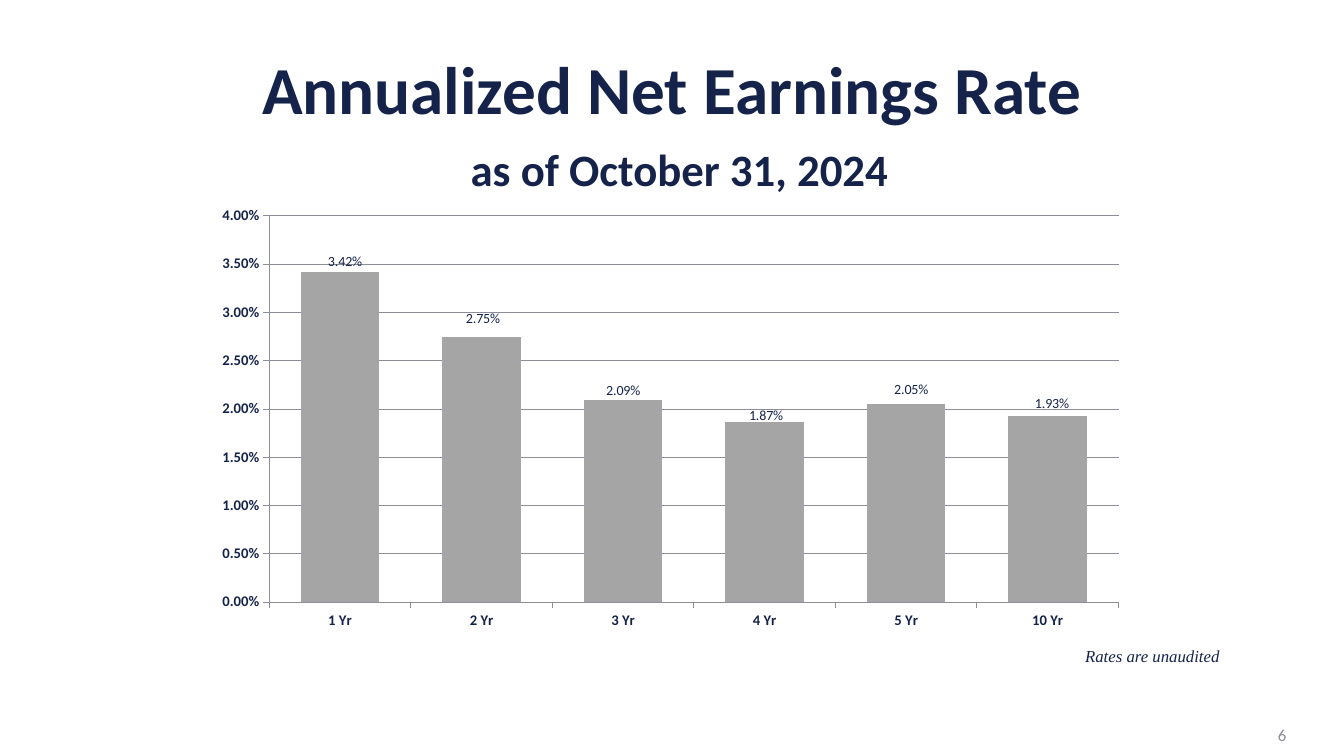
from dataclasses import dataclass

from lxml import etree
from pptx import Presentation
from pptx.chart.data import CategoryChartData
from pptx.dml.color import RGBColor
from pptx.enum import chart as ce, text as te
from pptx.oxml.ns import qn
from pptx.util import Pt


@dataclass(frozen=True)
class Theme:
    navy: RGBColor = RGBColor(0x15, 0x23, 0x4A)
    muted: RGBColor = RGBColor(0x8C, 0x8D, 0x96)
    bar: RGBColor = RGBColor(0xA5, 0xA5, 0xA5)
    font: str = "Calibri"
    note_font: str = "Times New Roman"
    title_size: float = 48
    subtitle_size: float = 32
    chart_size: float = 18
    axis_size: float = 10.5
    label_size: float = 10
    note_size: float = 12


THEME = Theme()
CHART_BOX = (150, 144, 651.6, 331.2)
PERCENT = "0.00%"

# Term, net rate, and label shift (right, down) in points
RATES = [
    ("1 Yr", 0.0342, 3.5, 1),
    ("2 Yr", 0.0275, 1, -4),
    ("3 Yr", 0.0209, 0, 1.5),
    ("4 Yr", 0.0187, 1, 4),
    ("5 Yr", 0.0205, 3.5, -2),
    ("10 Yr", 0.0193, 3, 0),
]


def style_font(font, size, color=THEME.navy, name=THEME.font, bold=False, italic=False):
    font.size, font.name = Pt(size), name
    font.bold, font.italic = bold, italic
    font.color.rgb = color


def manual_layout(**settings):
    layout = etree.Element(qn("c:layout"))
    manual = etree.SubElement(layout, qn("c:manualLayout"))
    for tag, value in settings.items():
        etree.SubElement(manual, qn(f"c:{tag}")).set("val", str(value))
    return layout


def add_title(slide, heading, subtitle):
    title = slide.shapes.title
    title.left, title.top, title.width, title.height = Pt(48), Pt(60), Pt(864), Pt(64)
    frame = title.text_frame
    frame.auto_size = te.MSO_AUTO_SIZE.NONE
    frame.vertical_anchor = te.MSO_ANCHOR.MIDDLE
    paragraph = frame.paragraphs[0]
    paragraph.alignment = te.PP_ALIGN.CENTER
    paragraph.line_spacing = 0.9

    def add_run(words, size):
        run = paragraph.add_run()
        run.text = words
        style_font(run.font, size, bold=True)

    add_run(heading, THEME.title_size)
    paragraph.add_line_break()
    add_run(" ", THEME.title_size)
    add_run(subtitle, THEME.subtitle_size)


def add_text(slide, words, box, alignment, anchor, **font_style):
    shape = slide.shapes.add_textbox(*map(Pt, box))
    frame = shape.text_frame
    frame.word_wrap = True
    frame.vertical_anchor = anchor
    paragraph = frame.paragraphs[0]
    paragraph.text = words
    paragraph.alignment = alignment
    style_font(paragraph.font, THEME.note_size, **font_style)


def format_axis(axis):
    axis.major_tick_mark = ce.XL_TICK_MARK.OUTSIDE
    axis.minor_tick_mark = ce.XL_TICK_MARK.NONE
    axis.format.line.color.rgb = THEME.muted
    axis.format.line.width = Pt(0.75)
    style_font(axis.tick_labels.font, THEME.axis_size, bold=True)


def place_label(point, right, down):
    label = point.data_label
    style_font(label.font, THEME.label_size)
    label.position = ce.XL_LABEL_POSITION.OUTSIDE_END
    layout = manual_layout(x=round(right / CHART_BOX[2], 4), y=round(down / CHART_BOX[3], 4))
    element = point._element.xpath(f"c:dLbls/c:dLbl[c:idx/@val='{point._idx}']")[0]
    element.find(qn("c:idx")).addnext(layout)


def add_rate_chart(slide):
    data = CategoryChartData(number_format=PERCENT)
    data.categories = [term for term, *_ in RATES]
    data.add_series("Series 1", [rate for _, rate, *_ in RATES])
    chart = slide.shapes.add_chart(
        ce.XL_CHART_TYPE.COLUMN_CLUSTERED, *map(Pt, CHART_BOX), data
    ).chart
    chart.has_legend = chart.has_title = False
    style_font(chart.font, THEME.chart_size)

    # Axes and gridlines
    format_axis(chart.category_axis)
    value_axis = chart.value_axis
    format_axis(value_axis)
    value_axis.minimum_scale, value_axis.maximum_scale = 0, 0.04
    value_axis.major_unit = 0.005
    value_axis.tick_labels.number_format = PERCENT
    value_axis.tick_labels.number_format_is_linked = False
    value_axis.has_major_gridlines = True
    grid_line = value_axis.major_gridlines.format.line
    grid_line.color.rgb, grid_line.width = THEME.muted, Pt(0.75)

    # Bars and their labels
    plot = chart.plots[0]
    plot.gap_width, plot.vary_by_categories = 80, False
    series = plot.series[0]
    series.format.fill.solid()
    series.format.fill.fore_color.rgb = THEME.bar
    labels = series.data_labels
    labels.show_value = True
    labels.number_format, labels.number_format_is_linked = PERCENT, False
    style_font(labels.font, THEME.label_size)
    for index, (_, _, right, down) in enumerate(RATES):
        place_label(series.points[index], right, down)

    # Fixed plot area
    plot_area = chart._chartSpace.chart.plotArea
    for layout in plot_area.findall(qn("c:layout")):
        plot_area.remove(layout)
    plot_area.insert(0, manual_layout(
        layoutTarget="inner", xMode="edge", yMode="edge", x=0.065, y=0.031, w=0.931, h=0.833))


def main():
    presentation = Presentation()
    presentation.slide_width, presentation.slide_height = Pt(960), Pt(540)
    slide = presentation.slides.add_slide(presentation.slide_layouts[5])

    add_title(slide, "Annualized Net Earnings Rate", "as of October 31, 2024")
    add_rate_chart(slide)

    # Page number and footnote
    add_text(slide, "6", (710, 510.5, 216, 28.8), te.PP_ALIGN.RIGHT,
             te.MSO_ANCHOR.MIDDLE, color=THEME.muted)
    add_text(slide, "Rates are unaudited", (768, 458, 168, 21.6), te.PP_ALIGN.LEFT,
             te.MSO_ANCHOR.TOP, name=THEME.note_font, italic=True)

    presentation.save("out.pptx")


if __name__ == "__main__":
    main()
